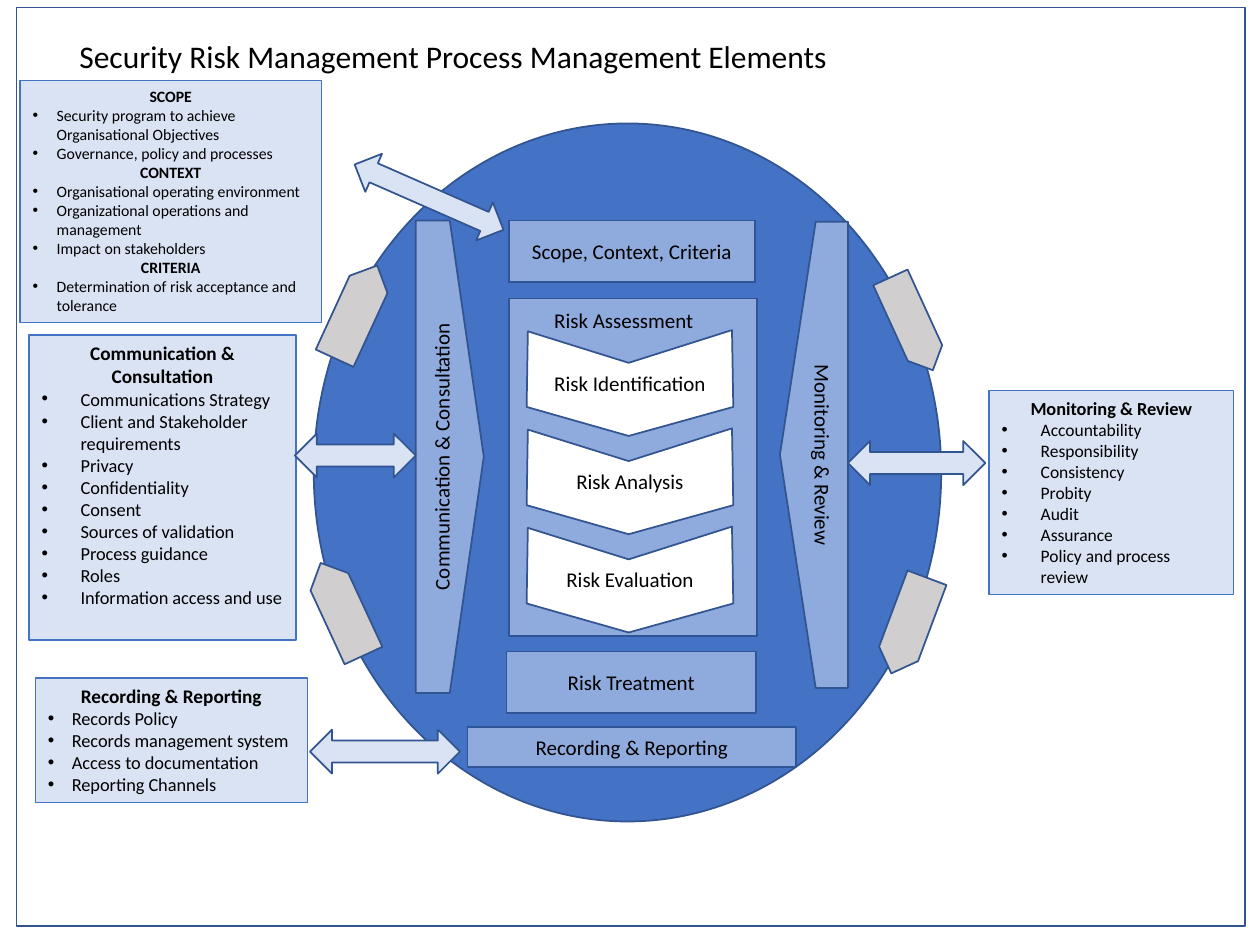
from dataclasses import dataclass
from typing import Optional

from lxml.etree import SubElement
from pptx import Presentation
from pptx.dml.color import RGBColor
from pptx.enum.shapes import MSO_SHAPE as Preset
from pptx.enum.text import MSO_ANCHOR as Anchor, MSO_AUTO_SIZE as AutoSize, PP_ALIGN as Align
from pptx.oxml.ns import qn
from pptx.util import Inches, Pt

BLUE = RGBColor(0x44, 0x72, 0xC4)
MID_BLUE = RGBColor(0x8F, 0xAA, 0xDC)
PALE_BLUE = RGBColor(0xDA, 0xE3, 0xF3)
EDGE = RGBColor(0x32, 0x54, 0x91)
BOX_EDGE = RGBColor(0x2F, 0x55, 0x97)
GREY = RGBColor(0xD0, 0xCE, 0xCE)
WHITE = RGBColor(0xFF, 0xFF, 0xFF)
BLACK = RGBColor(0, 0, 0)
FONT = "Calibri"

# The slide is a grid of 100 columns by 75 rows
COLUMNS, ROWS = 100, 75
presentation = Presentation()
presentation.slide_width, presentation.slide_height = Inches(10), Inches(7.5)
COLUMN = presentation.slide_width / COLUMNS
ROW = presentation.slide_height / ROWS


@dataclass(frozen=True)
class Box:
    """A place on the grid, in columns and rows."""
    left: float
    top: float
    width: float
    height: float

    def lengths(self) -> tuple:
        return (round(self.left * COLUMN), round(self.top * ROW),
                round(self.width * COLUMN), round(self.height * ROW))


@dataclass(frozen=True)
class Part:
    preset: Preset
    box: Box
    fill: Optional[RGBColor]
    text: str = ""
    rotation: float = 0
    edge: RGBColor = EDGE
    vertical: bool = False
    point: Optional[float] = None


@dataclass(frozen=True)
class Card:
    """A bulleted list; each section is a heading and its items."""
    box: Box
    sections: dict
    heading_size: float
    item_size: float
    indent: float


def format_font(paragraph, size: float, bold: bool = False) -> None:
    font = paragraph.font
    font.name, font.size, font.bold = FONT, Pt(size), bold
    font.color.rgb = BLACK


def paint(shape, fill: Optional[RGBColor], edge: RGBColor, width: float = 1) -> None:
    if fill is None:
        shape.fill.background()
    else:
        shape.fill.solid()
        shape.fill.fore_color.rgb = fill
    shape.line.color.rgb = edge
    shape.line.width = Pt(width)


def write_label(shape, text: str) -> None:
    frame = shape.text_frame
    frame.text, frame.word_wrap = text, True
    frame.vertical_anchor = Anchor.MIDDLE
    frame.paragraphs[0].alignment = Align.CENTER
    format_font(frame.paragraphs[0], 12)


def place(shape, box: Box) -> None:
    shape.left, shape.top, shape.width, shape.height = box.lengths()


def draw_part(slide, part: Part) -> None:
    shape = slide.shapes.add_shape(part.preset, *part.box.lengths())
    shape.shadow.inherit = False
    shape.rotation = part.rotation
    paint(shape, part.fill, part.edge)
    if part.point is not None:
        shape.adjustments[0] = part.point
    if part.text:
        write_label(shape, part.text)
    if part.vertical:
        shape.text_frame._txBody.bodyPr.set("vert", "vert270")


def draw_chevron(slide, top: float, text: str) -> None:
    points = [(41.9, 0.1), (49.9, 2.6), (58.1, 0), (58.2, 6.1), (49.9, 8.4), (41.8, 6.1)]
    corners = [(round(x * COLUMN), round((top + y) * ROW)) for x, y in points]
    builder = slide.shapes.build_freeform(*corners[0])
    builder.add_line_segments(corners[1:], close=True)
    shape = builder.convert_to_shape()
    shape.shadow.inherit = False
    paint(shape, WHITE, EDGE)
    write_label(shape, text)


def fill_card(placeholder, card: Card) -> None:
    place(placeholder, card.box)
    paint(placeholder, PALE_BLUE, BLUE, 0.75)
    frame = placeholder.text_frame
    frame.auto_size, frame.word_wrap = AutoSize.NONE, True
    frame.vertical_anchor = Anchor.TOP
    lines = [(text, text == heading) for heading, items in card.sections.items()
             for text in (heading, *items)]
    frame.text = "\n".join(text for text, _ in lines)
    for paragraph, (_, is_heading) in zip(frame.paragraphs, lines):
        paragraph.alignment = Align.CENTER if is_heading else Align.LEFT
        paragraph.space_before, paragraph.line_spacing = Pt(0), 1.0
        properties = paragraph._p.get_or_add_pPr()
        indent = 0 if is_heading else Inches(card.indent)
        properties.set("marL", str(indent))
        properties.set("indent", str(-indent))
        if is_heading:
            SubElement(properties, qn("a:buNone"))
        else:
            SubElement(properties, qn("a:buFont")).set("typeface", "Arial")
            SubElement(properties, qn("a:buChar")).set("char", "•")
        format_font(paragraph, card.heading_size if is_heading else card.item_size, is_heading)


CARDS = [
    Card(Box(1.6, 6.4, 23.9, 19.2), {
        "SCOPE": ["Security program to achieve Organisational Objectives",
                  "Governance, policy and processes"],
        "CONTEXT": ["Organisational operating environment",
                    "Organizational operations and management",
                    "Impact on stakeholders"],
        "CRITERIA": ["Determination of risk acceptance and tolerance"],
    }, 9, 9, 0.19),
    Card(Box(2.3, 26.6, 21.2, 24.2), {
        "Communication & Consultation": [
            "Communications Strategy", "Client and Stakeholder requirements", "Privacy",
            "Confidentiality", "Consent", "Sources of validation", "Process guidance",
            "Roles", "Information access and use"],
    }, 11, 10.5, 0.31),
    Card(Box(2.8, 53.8, 21.6, 9.9), {
        "Recording & Reporting": [
            "Records Policy", "Records management system", "Access to documentation",
            "Reporting Channels"],
    }, 11, 10.5, 0.19),
    Card(Box(78.5, 31, 19.4, 16.2), {
        "Monitoring & Review": [
            "Accountability", "Responsibility", "Consistency", "Probity", "Audit",
            "Assurance", "Policy and process review"],
    }, 10.5, 10, 0.31),
]

PROCESS = [
    Part(Preset.OVAL, Box(24.9, 9.8, 49.8, 55.4), BLUE),
    Part(Preset.PENTAGON, Box(33, 17.5, 5.4, 37.5), MID_BLUE,
         "Communication & Consultation", vertical=True),
    Part(Preset.PENTAGON, Box(61.9, 17.6, 5.4, 37), MID_BLUE,
         "Monitoring & Review", 180, vertical=True, point=0.525),
    Part(Preset.RECTANGLE, Box(40.4, 17.5, 19.5, 4.9), MID_BLUE,
         "Scope, Context, Criteria", edge=BOX_EDGE),
    Part(Preset.RECTANGLE, Box(40.4, 23.7, 19.7, 26.8), MID_BLUE, edge=BOX_EDGE),
    Part(Preset.RECTANGLE, Box(40.2, 51.7, 19.8, 4.9), MID_BLUE,
         "Risk Treatment", edge=BOX_EDGE),
    Part(Preset.RECTANGLE, Box(37.1, 57.7, 26.1, 3.2), MID_BLUE,
         "Recording & Reporting", edge=BOX_EDGE),
]
CYCLE_MARKERS = [
    Part(Preset.PENTAGON, Box(left, top, 8.1, height), GREY, rotation=angle)
    for left, top, height, angle in [(24.2, 23.1, 3.3, 294.7), (23.1, 46.7, 3.3, 245.2),
                                     (68.3, 24.2, 3, 65.4), (68.1, 48, 3.3, 110.5)]
]
CARD_ARROWS = [
    Part(Preset.LEFT_RIGHT_ARROW, Box(left, top, width, height), PALE_BLUE, rotation=angle)
    for left, top, width, height, angle in [(23.4, 34.4, 9.6, 3.5, 0), (67.3, 35, 10.9, 3.5, 0),
                                            (24.6, 57.9, 11.9, 3.5, 0), (27.6, 14, 12.9, 3.3, 23.7)]
]
FRAME = Part(Preset.RECTANGLE, Box(1.3, 0.6, 97.5, 72.9), None)
ASSESSMENT_STEPS = ["Risk Identification", "Risk Analysis", "Risk Evaluation"]
FIRST_STEP, STEP_PITCH = 26.2, 7.8

# The comparison layout has a title and four body placeholders
slide = presentation.slides.add_slide(presentation.slide_layouts[4])
title, *bodies = slide.placeholders

# Title
place(title, Box(5.3, 2.4, 61.9, 4))
title.text_frame.text = "Security Risk Management Process Management Elements"
title.text_frame.auto_size, title.text_frame.word_wrap = AutoSize.NONE, False
title.text_frame.paragraphs[0].alignment = Align.LEFT
format_font(title.text_frame.paragraphs[0], 18)

# Lists around the process
for body, card in zip(bodies, CARDS):
    fill_card(body, card)

# Process, arrows and frame
for part in [*PROCESS, *CYCLE_MARKERS, *CARD_ARROWS, FRAME]:
    draw_part(slide, part)

# Risk assessment steps
for index, step in enumerate(ASSESSMENT_STEPS):
    draw_chevron(slide, FIRST_STEP + index * STEP_PITCH, step)
heading = slide.shapes.add_textbox(*Box(43, 23.9, 13.2, 3).lengths())
heading.text_frame.text = "Risk Assessment"
heading.text_frame.word_wrap = True
format_font(heading.text_frame.paragraphs[0], 12)

presentation.save("out.pptx")
